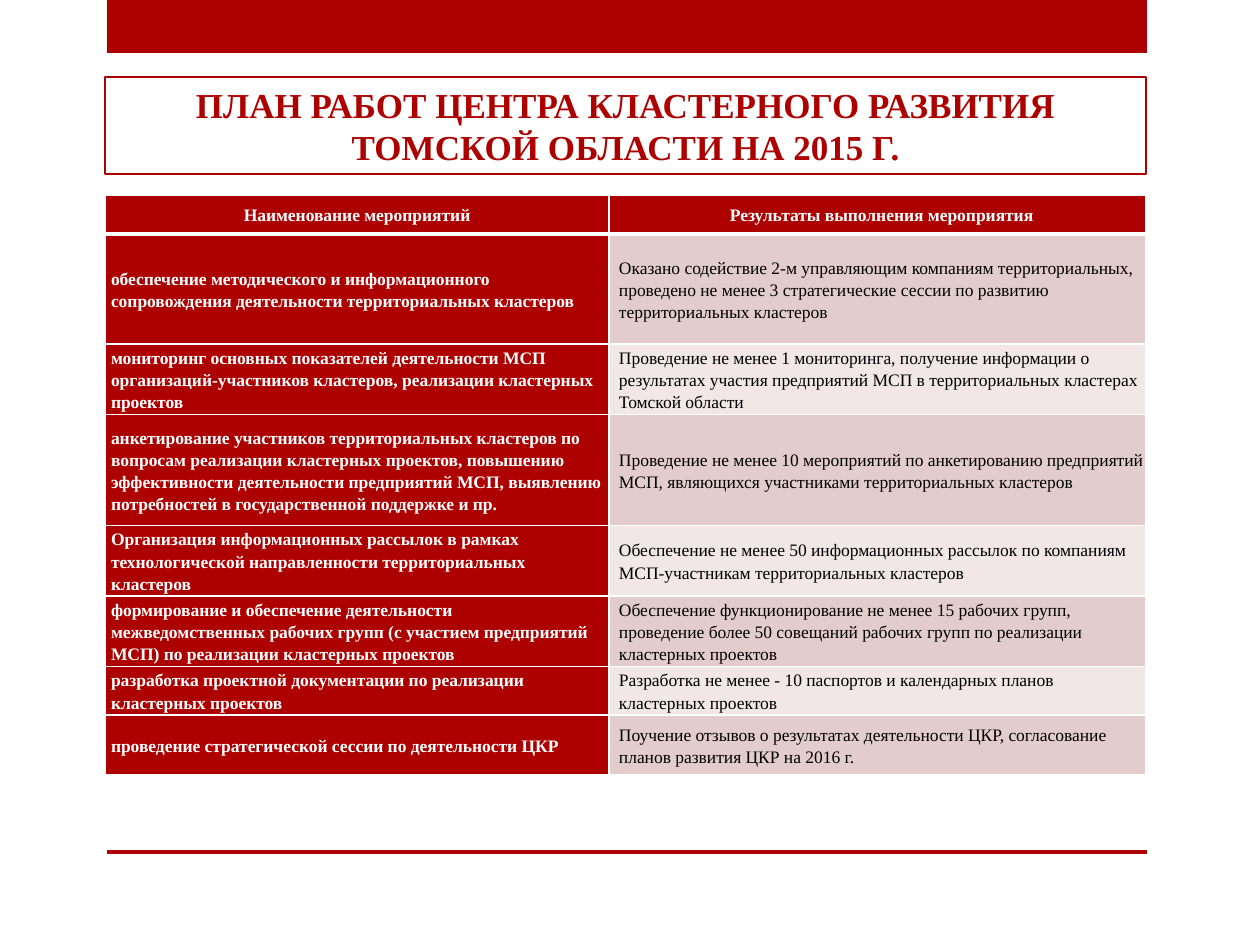
from dataclasses import dataclass

from lxml import etree
from pptx import Presentation
from pptx import util as u
from pptx.dml.color import RGBColor
from pptx.enum import shapes, text
from pptx.oxml.ns import qn


@dataclass(frozen=True)
class Theme:
    red: str = "AD0101"
    white: str = "FFFFFF"
    black: str = "000000"
    bands: tuple = ("E3CCCC", "F1E7E7")
    font: str = "Times New Roman"
    title: int = 20
    body: int = 10
    grid: int = 1
    header_rule: int = 3
    frame: float = 0.75


T = Theme()
ROW_HEIGHTS = (39, 110, 60, 111, 60, 60, 34, 60)
COL_WIDTHS = (504, 537)
INSET = 2
HEADER_INDENTS = (0, 8)
BODY_INDENTS = (4, 8)
TITLE = "ПЛАН РАБОТ ЦЕНТРА КЛАСТЕРНОГО РАЗВИТИЯ ТОМСКОЙ ОБЛАСТИ НА 2015 Г."
ROWS = (
    ("Наименование мероприятий", "Результаты выполнения мероприятия"),
    ("обеспечение методического и информационного сопровождения деятельности территориальных кластеров",
     "Оказано содействие 2-м управляющим компаниям территориальных, проведено не менее 3 стратегические сессии по развитию территориальных кластеров"),
    ("мониторинг основных показателей деятельности МСП организаций-участников кластеров, реализации кластерных проектов",
     "Проведение не менее 1 мониторинга, получение информации о результатах участия предприятий МСП в территориальных кластерах Томской области"),
    ("анкетирование участников территориальных кластеров по вопросам реализации кластерных проектов, повышению эффективности деятельности предприятий МСП, выявлению потребностей в государственной поддержке и пр.",
     "Проведение не менее 10 мероприятий по анкетированию предприятий МСП, являющихся участниками территориальных кластеров"),
    ("Организация информационных рассылок в рамках технологической направленности территориальных кластеров",
     "Обеспечение не менее 50 информационных рассылок по компаниям МСП-участникам территориальных кластеров"),
    ("формирование и обеспечение деятельности межведомственных рабочих групп (с участием предприятий МСП) по реализации кластерных проектов",
     "Обеспечение функционирование не менее 15 рабочих групп, проведение более 50 совещаний рабочих групп по реализации кластерных проектов"),
    ("разработка проектной документации по реализации кластерных проектов",
     "Разработка не менее - 10 паспортов и календарных планов кластерных проектов"),
    ("проведение стратегической сессии по деятельности ЦКР",
     "Поучение отзывов о результатах деятельности ЦКР, согласование планов развития ЦКР на 2016 г."),
)


def px(n):
    return u.Emu(round(n * 914400 / 126))


def rgb(color):
    return RGBColor.from_string(color)


def style_text(p, size, color, bold):
    for r in p.runs:
        r.font.name = T.font
        r.font.size = u.Pt(size)
        r.font.bold = bold
        r.font.color.rgb = rgb(color)


def add_rect(s, box):
    sp = s.shapes.add_shape(shapes.MSO_SHAPE.RECTANGLE, *map(px, box))
    sp.shadow.inherit = False
    return sp


def add_band(s, box):
    sp = add_rect(s, box)
    sp.fill.solid()
    sp.fill.fore_color.rgb = rgb(T.red)
    sp.line.fill.background()


def add_title(s, box):
    sp = add_rect(s, box)
    sp.fill.background()
    sp.line.color.rgb = rgb(T.red)
    sp.line.width = u.Pt(T.frame)
    tf = sp.text_frame
    tf.word_wrap = True
    tf.vertical_anchor = text.MSO_ANCHOR.MIDDLE
    tf.text = TITLE
    p = tf.paragraphs[0]
    p.alignment = text.PP_ALIGN.CENTER
    style_text(p, T.title, T.red, True)


def set_borders(cell, widths):
    tcPr = cell._tc.get_or_add_tcPr()
    for side, width in zip("LRTB", widths):
        ln = etree.SubElement(tcPr, qn(f"a:ln{side}"), w=str(u.Pt(width)))
        fill = etree.SubElement(ln, qn("a:solidFill"))
        etree.SubElement(fill, qn("a:srgbClr"), val=T.white)


def fill_cell(cell, row, col):
    header = row == 0
    strong = header or col == 0
    top = T.header_rule if row == 1 else T.grid
    bottom = T.header_rule if header else T.grid
    set_borders(cell, (T.grid, T.grid, top, bottom))
    cell.fill.solid()
    cell.fill.fore_color.rgb = rgb(T.red if strong else T.bands[(row - 1) % 2])
    cell.margin_left = cell.margin_right = px(INSET)
    cell.margin_top = cell.margin_bottom = px(INSET)
    cell.vertical_anchor = text.MSO_ANCHOR.MIDDLE
    cell.text_frame.text = ROWS[row][col]
    p = cell.text_frame.paragraphs[0]
    p.alignment = text.PP_ALIGN.CENTER if header else text.PP_ALIGN.LEFT
    p.line_spacing = 1.15
    indent = (HEADER_INDENTS if header else BODY_INDENTS)[col]
    pPr = p._p.get_or_add_pPr()
    pPr.set("marL", str(px(indent)))
    pPr.set("indent", "0")
    style_text(p, T.body, T.white if strong else T.black, strong)


def add_plan(s, box):
    frame = s.shapes.add_table(len(ROWS), len(COL_WIDTHS), *map(px, box))
    table = frame.table
    for column, width in zip(table.columns, COL_WIDTHS):
        column.width = px(width)
    for row, height in enumerate(ROW_HEIGHTS):
        table.rows[row].height = px(height)
        for col in range(len(COL_WIDTHS)):
            fill_cell(table.cell(row, col), row, col)
    frame.height = px(box[3])


def main():
    prs = Presentation()
    prs.slide_width, prs.slide_height = px(1260), px(945)
    s = prs.slides.add_slide(prs.slide_layouts[6])
    add_band(s, (107, 0, 1040, 53))
    add_band(s, (107, 850, 1040, 4))
    add_title(s, (105, 77, 1041, 97))
    add_plan(s, (105, 195, sum(COL_WIDTHS), 601))
    prs.save("out.pptx")


if __name__ == "__main__":
    main()
